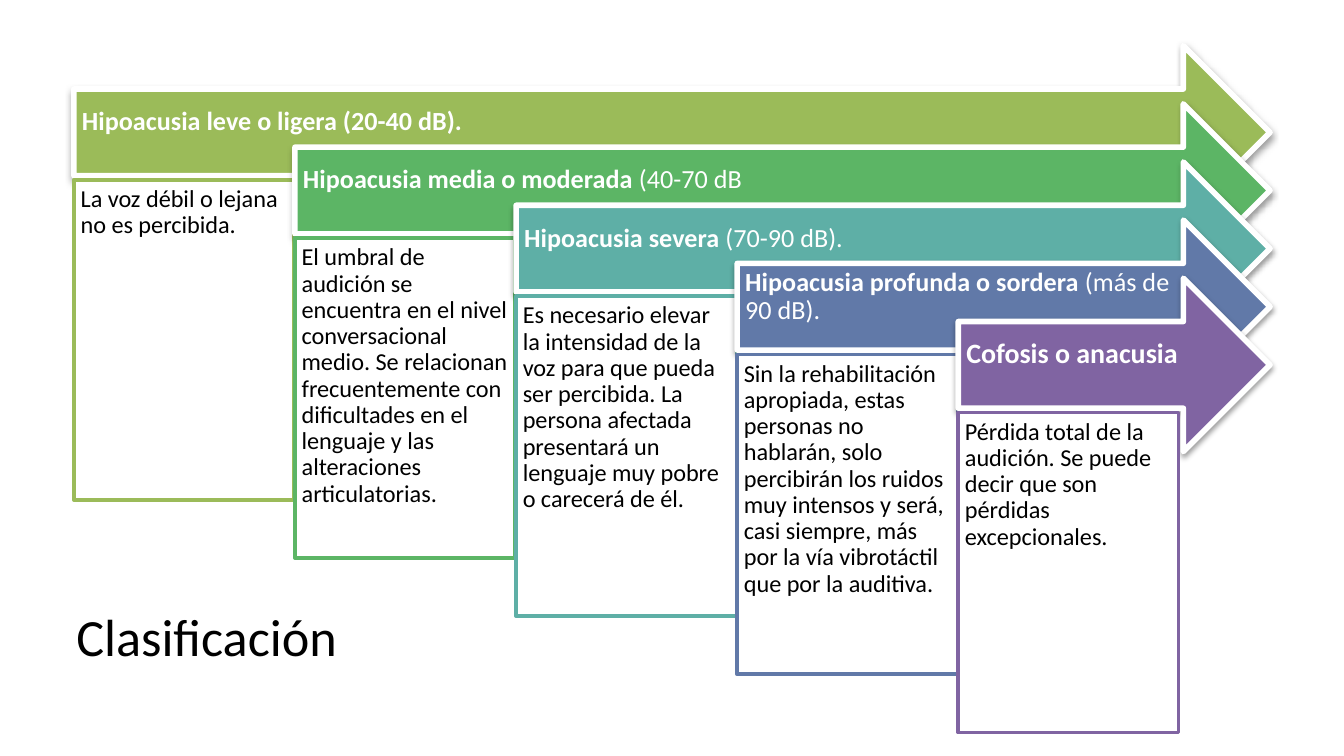
"""Build the slide that classifies hearing loss as five stepped arrows."""
from lxml.etree import SubElement
from pptx import Presentation
from pptx.dml.color import RGBColor
from pptx.enum.shapes import MSO_SHAPE as Shape
from pptx.enum.text import MSO_ANCHOR as Anchor, PP_ALIGN as Align
from pptx.oxml.ns import qn
from pptx.util import Inches, Pt


def color(value):
    return RGBColor.from_string(value)


def add_text_shape(kind, place, fill, line, width, insets, anchor, spans, size, ink):
    box = page.shapes.add_shape(kind, *[Inches(value) for value in place])
    box.shadow.inherit = False
    box.fill.solid()
    box.fill.fore_color.rgb = color(fill)
    box.line.color.rgb = color(line)
    box.line.width = Pt(width)
    frame = box.text_frame
    frame.word_wrap = True
    frame.vertical_anchor = anchor
    frame.margin_left, frame.margin_top, frame.margin_right, frame.margin_bottom = [
        Inches(value) for value in insets]
    para = frame.paragraphs[0]
    para.alignment = Align.LEFT
    para.line_spacing = 0.9
    for words, bold in spans:
        span = para.add_run()
        span.text = words
        span.font.name = "Calibri"
        span.font.size = Pt(size)
        span.font.bold = bold
        span.font.color.rgb = color(ink)
    return box


deck = Presentation()
deck.slide_width = Inches(10)
deck.slide_height = Inches(10 * 9 / 16)
page = deck.slides.add_slide(deck.slide_layouts[6])

levels = [
    ("9BBB59", 14, "Hipoacusia leve o ligera (20-40 dB).", "",
     "La voz débil o lejana no es percibida."),
    ("5CB565", 14, "Hipoacusia media o moderada ", "(40-70 dB",
     "El umbral de audición se encuentra en el nivel conversacional medio. Se relacionan "
     "frecuentemente con dificultades en el lenguaje y las alteraciones articulatorias."),
    ("5EAFA6", 14, "Hipoacusia severa ", "(70-90 dB).",
     "Es necesario elevar la intensidad de la voz para que pueda ser percibida. La persona "
     "afectada presentará un lenguaje muy pobre o carecerá de él."),
    ("6179A8", 14, "Hipoacusia profunda o sordera ", "(más de 90 dB).",
     "Sin la rehabilitación apropiada, estas personas no hablarán, solo percibirán los ruidos "
     "muy intensos y será, casi siempre, más por la vía vibrotáctil que por la auditiva."),
    ("8064A2", 15, "Cofosis o anacusia", "",
     "Pérdida total de la audición. Se puede decir que son pérdidas excepcionales."),
]
step_right, step_down = 6.58 / 4, 1.73 / 4
column_width, arrow_tip = 1.64, 9.45

for index, (tint, size, name, decibels, description) in enumerate(levels):
    left = 0.55 + index * step_right
    top = 0.34 + index * step_down
    title = [(name, True)] + ([(decibels, False)] if decibels else [])
    arrow = add_text_shape(
        Shape.RIGHT_ARROW, (left, top, arrow_tip - left, 1.29), tint, "FFFFFF", 3,
        (0.06, 0.06, 0.28, 0.21), Anchor.MIDDLE, title, size, "FFFFFF")
    effects = arrow._element.spPr.find(qn("a:effectLst"))
    shadow = SubElement(effects, qn("a:outerShdw"), blurRad=str(Pt(3.1)), dist=str(Pt(1.6)),
                        dir="5400000", rotWithShape="0")
    shade = SubElement(shadow, qn("a:srgbClr"), val="000000")
    SubElement(shade, qn("a:alpha"), val="38000")
    add_text_shape(
        Shape.RECTANGLE, (left, top + 1, column_width, 2.38), "FFFFFF", tint, 2,
        (0.05, 0.05, 0.05, 0.05), Anchor.TOP, [(description, False)], 13, "000000")

heading = page.shapes.add_textbox(Inches(0.47), Inches(4.45), Inches(3.2), Inches(0.57))
heading.text_frame.word_wrap = True
heading.text_frame.text = "Clasificación"
span = heading.text_frame.paragraphs[0].runs[0]
span.font.name = "Calibri"
span.font.size = Pt(28)
span.font.color.rgb = color("000000")

deck.save("out.pptx")
